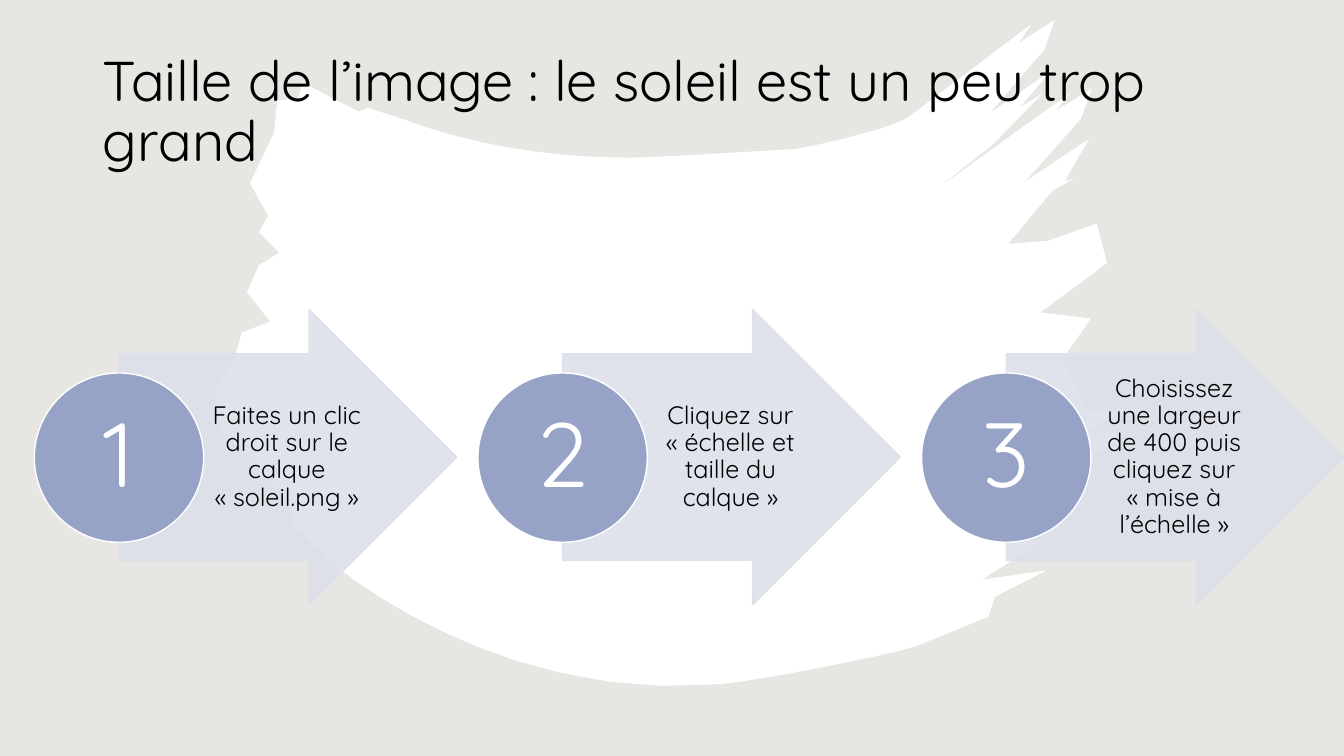
from dataclasses import dataclass

from lxml import etree
from pptx import Presentation
from pptx.dml.color import RGBColor
from pptx.enum import shapes, text
from pptx.oxml.ns import qn
from pptx.util import Inches, Pt

TITLE = "Taille de l’image : le soleil est un peu trop grand"
STEPS = [
    "Faites un clic droit sur le calque «\u00a0soleil.png\u00a0»",
    "Cliquez sur «\u00a0échelle et taille du calque\u00a0»",
    "Choisissez une largeur de 400 puis cliquez sur «\u00a0mise à l’échelle\u00a0»",
]

# Brush outline in inches: pairs are corners, sextuples are cubic curves.
BRUSH = [
    (10.46, 0.2), (10.1, 0.43), (10.23, 0.24), (9, 1.17),
    (8.77, 1.3, 8.02, 1.46, 7.88, 1.48), (6.65, 1.55),
    (5.16, 1.65, 4.08, 1.21, 4.02, 1.19), (3.65, 1.07), (3.56, 1.11), (3, 0.82),
    (2.96, 0.97), (2.75, 1), (2.72, 1.31), (2.48, 1.82), (2.66, 2.14), (2.57, 2.3),
    (2.77, 2.51), (2.57, 2.63), (2.45, 2.9), (2.68, 3.19), (2.4, 3.3), (2.32, 3.57),
    (2.13, 3.88), (2.2, 4.3), (2.52, 4.56), (2.89, 5.02), (2.92, 5.23), (3.27, 5.56),
    (3.28, 5.58, 4.88, 6.97, 7.1, 6.79), (7.47, 6.77, 8.9, 6.48, 9.09, 6.41),
    (9.8, 6.12), (9.87, 5.92), (10.38, 5.66), (9.74, 5.75), (10.37, 5.35),
    (10.12, 5.36), (10.88, 4.64), (10.45, 4.79), (11.17, 4.3), (10.78, 4.29),
    (11.15, 4.07), (10.79, 4.08), (10.54, 3.56), (10.82, 3.16), (10.32, 3.1),
    (10.98, 2.61), (10.88, 2.22), (10.39, 2.39), (10, 2.42), (10.44, 1.89),
    (10.66, 1.77), (10.56, 1.8), (10.8, 1.38), (10.17, 1.8), (10.72, 1.18),
    (10.83, 0.88), (10.47, 1.1), (10.62, 0.92), (9.27, 1.89), (9.84, 1.44),
    (10.34, 0.93), (10.11, 1.07), (10.43, 0.7), (9.82, 1.12), (10.36, 0.49),
]


@dataclass(frozen=True)
class Theme:
    font: str = "Quicksand"
    paper: str = "E8E6E2"
    white: str = "FFFFFF"
    ink: str = "000000"
    arrow: str = "DDE0EA"
    disc: str = "96A3C6"
    title_size: int = 40
    step_size: int = 18
    number_size: int = 65


T = Theme()
PITCH, DISC_LEFT, DISC_TOP, DISC = 4.4, 0.34, 3.7, 1.68
ARROW_TOP, ARROW_W, ARROW_H = 3.07, 3.35, 2.93
STEP_TOP, STEP_W, STEP_H = 3.51, 1.63, 2.05


def inches(*values):
    return [Inches(v) for v in values]


def flatten(outline, steps=12):
    """Turn corners and cubic curves into a list of points in EMU."""
    points = [outline[0]]
    for seg in outline[1:]:
        if len(seg) == 2:
            points.append(seg)
            continue
        ctrl = [points[-1], seg[:2], seg[2:4], seg[4:]]
        for k in range(1, steps + 1):
            t = k / steps
            weights = ((1 - t) ** 3, 3 * t * (1 - t) ** 2, 3 * t * t * (1 - t), t ** 3)
            points.append(tuple(sum(w * c[axis] for w, c in zip(weights, ctrl))
                                for axis in (0, 1)))
    return [inches(*point) for point in points]


def paint(sp, fill, line=None, opacity=None):
    sp.shadow.inherit = False
    sp.fill.solid()
    sp.fill.fore_color.rgb = RGBColor.from_string(fill)
    if line:
        sp.line.color.rgb = RGBColor.from_string(line)
        sp.line.width = Pt(1)
    else:
        sp.line.fill.background()
    if opacity:
        for color in sp._element.spPr.iter(qn("a:srgbClr")):
            etree.SubElement(color, qn("a:alpha"), val=str(opacity * 1000))


def write(sp, words, size, color, align, margins):
    tf = sp.text_frame
    tf.word_wrap = True
    tf.auto_size = text.MSO_AUTO_SIZE.NONE
    tf.vertical_anchor = text.MSO_ANCHOR.MIDDLE
    tf.margin_left, tf.margin_top, tf.margin_right, tf.margin_bottom = inches(*margins)
    p = tf.paragraphs[0]
    p.alignment = align
    p.line_spacing = 0.9
    r = p.add_run()
    r.text = words
    r.font.name, r.font.size = T.font, Pt(size)
    r.font.color.rgb = RGBColor.from_string(color)


def add_brush(s):
    start, *rest = flatten(BRUSH)
    fb = s.shapes.build_freeform(*start)
    fb.add_line_segments(rest)
    paint(fb.convert_to_shape(), T.white)


def add_step(s, index, words):
    left = DISC_LEFT + index * PITCH
    center = text.PP_ALIGN.CENTER
    arrow = s.shapes.add_shape(shapes.MSO_SHAPE.RIGHT_ARROW,
                               *inches(left + DISC / 2, ARROW_TOP, ARROW_W, ARROW_H))
    arrow.adjustments[0], arrow.adjustments[1] = 0.7, 0.5
    paint(arrow, T.arrow, T.arrow, opacity=90)
    label = s.shapes.add_textbox(*inches(left + DISC, STEP_TOP, STEP_W, STEP_H))
    write(label, words, T.step_size, T.ink, center, (0.05, 0.01, 0.03, 0.01))
    disc = s.shapes.add_shape(shapes.MSO_SHAPE.OVAL, *inches(left, DISC_TOP, DISC, DISC))
    paint(disc, T.disc, T.white)
    write(disc, str(index + 1), T.number_size, T.white, center, (0.05,) * 4)


def main():
    prs = Presentation()
    prs.slide_width, prs.slide_height = inches(13.33, 7.5)
    s = prs.slides.add_slide(prs.slide_layouts[5])
    s.background.fill.solid()
    s.background.fill.fore_color.rgb = RGBColor.from_string(T.paper)
    add_brush(s)
    title = s.shapes.title
    title.left, title.top, title.width, title.height = inches(0.92, 0.4, 11.5, 1.45)
    write(title, TITLE, T.title_size, T.ink, text.PP_ALIGN.LEFT, (0.1, 0.05, 0.1, 0.05))
    s.shapes._spTree.append(title._element)  # bring the title in front of the brush
    for index, words in enumerate(STEPS):
        add_step(s, index, words)
    prs.save("out.pptx")


if __name__ == "__main__":
    main()
